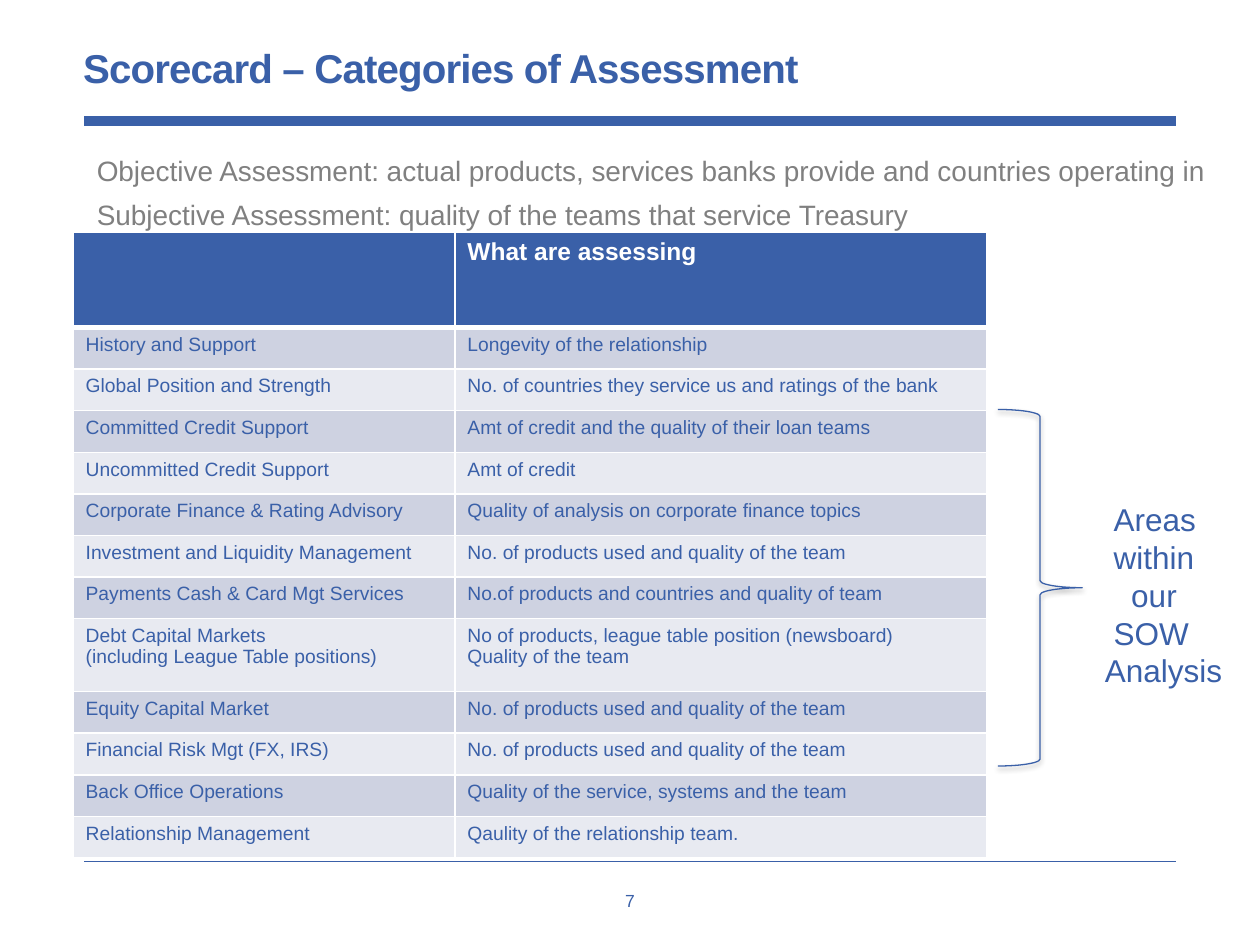
from pptx import Presentation
from pptx.util import Inches, Pt
from pptx.dml.color import RGBColor
from pptx.enum.shapes import MSO_CONNECTOR as Conn, MSO_SHAPE as Shape
from pptx.enum.text import PP_ALIGN as Align
from pptx.oxml import parse_xml
from pptx.oxml.ns import nsdecls

BLUE, GREY, WHITE = "3A60A8", "808080", "FFFFFF"
BANDS = ["CED2E1", "E8EAF1"]
TITLE = "Scorecard – Categories of Assessment"
INTRO = [
    "Objective Assessment: actual products, services banks provide and countries operating in",
    "Subjective Assessment: quality of the teams that service Treasury",
]
TEAM = "No. of products used and quality of the team"
ROWS = [
    ("", "What are assessing"),
    ("History and Support", "Longevity of the relationship"),
    ("Global Position and Strength", "No. of countries they service us and ratings of the bank"),
    ("Committed Credit Support", "Amt of credit and the quality of their loan teams"),
    ("Uncommitted Credit Support", "Amt of credit"),
    ("Corporate Finance & Rating Advisory", "Quality of analysis on corporate finance topics"),
    ("Investment and Liquidity Management", TEAM),
    ("Payments Cash & Card Mgt Services", "No.of products and countries and quality of team"),
    ("Debt Capital Markets\n(including League Table positions)",
     "No of products, league table position (newsboard)\nQuality of the team"),
    ("Equity Capital Market", TEAM),
    ("Financial Risk Mgt (FX, IRS)", TEAM),
    ("Back Office Operations", "Quality of the service, systems and the team"),
    ("Relationship Management", "Qaulity of the relationship team."),
]
COLS = [3.03, 4.22]
HEAD, ROW, TALL = 0.76, 0.33, 0.58
AREAS = [("Areas", 0.07), ("within", 0.07), ("our", 0.21), ("SOW", 0.07), ("Analysis", 0)]


def color(code):
    return RGBColor.from_string(code)


def style(para, size, code, bold=False):
    font = para.font
    font.name, font.size, font.bold = "Arial", Pt(size), bold
    font.color.rgb = color(code)


def add_text(slide, box, lines, size, code, bold=False, wrap=True, inset=True):
    frame = slide.shapes.add_textbox(*map(Inches, box)).text_frame
    frame.word_wrap = wrap
    if not inset:
        frame.margin_left = frame.margin_right = 0
        frame.margin_top = frame.margin_bottom = 0
    frame.text = "\n".join(lines)
    for para in frame.paragraphs:
        style(para, size, code, bold)
    return frame.paragraphs


def add_rule(slide, top, width):
    rule = slide.shapes.add_connector(
        Conn.STRAIGHT, Inches(0.67), Inches(top), Inches(9.33), Inches(top))
    rule.line.color.rgb = color(BLUE)
    rule.line.width = Pt(width)
    rule._element.spPr.append(parse_xml(f"<a:effectLst {nsdecls('a')}/>"))


def add_edges(cell, base):
    props = cell._tc.get_or_add_tcPr()
    for side, width in zip("LRTB", (1, 1, 1, base)):
        props.append(parse_xml(
            f'<a:ln{side} {nsdecls("a")} w="{Pt(width)}"><a:solidFill>'
            f'<a:srgbClr val="{WHITE}"/></a:solidFill></a:ln{side}>'))


def add_grid(slide):
    high = [HEAD] + [TALL if "\n" in row[0] else ROW for row in ROWS[1:]]
    table = slide.shapes.add_table(
        len(ROWS), len(COLS), Inches(0.58), Inches(1.84),
        Inches(sum(COLS)), Inches(sum(high))).table
    for col, width in zip(table.columns, COLS):
        col.width = Inches(width)
    for r, row in enumerate(ROWS):
        table.rows[r].height = Inches(high[r])
        head = r == 0
        for c, text in enumerate(row):
            cell = table.cell(r, c)
            add_edges(cell, 3 if head else 1)
            cell.fill.solid()
            cell.fill.fore_color.rgb = color(BLUE if head else BANDS[(r - 1) % 2])
            cell.text = text
            for para in cell.text_frame.paragraphs:
                style(para, 14 if head else 11, WHITE if head else BLUE, head)


def add_brace(slide):
    brace = slide.shapes.add_shape(
        Shape.RIGHT_BRACE, Inches(7.92), Inches(3.25), Inches(0.67), Inches(2.83))
    brace.fill.background()
    brace.line.color.rgb = color(BLUE)
    brace.line.width = Pt(0.75)
    brace._element.spPr.append(parse_xml(
        f'<a:effectLst {nsdecls("a")}><a:outerShdw blurRad="{Pt(3.1)}" dist="{Pt(1.6)}" '
        'dir="5400000" rotWithShape="0"><a:srgbClr val="000000"><a:alpha val="38000"/>'
        '</a:srgbClr></a:outerShdw></a:effectLst>'))


def main():
    deck = Presentation()
    deck.slide_width, deck.slide_height = Inches(10), Inches(7.5)
    slide = deck.slides.add_slide(deck.slide_layouts[6])

    add_rule(slide, 6.84, 0.57)
    add_rule(slide, 0.96, 6)
    page = add_text(slide, (4.53, 7.06, 0.94, 0.17), ["7"], 10, BLUE, inset=False)
    page[0].alignment = Align.CENTER
    add_grid(slide)

    title = add_text(slide, (0.66, 0.39, 8.68, 0.34), [TITLE], 23, BLUE, True, inset=False)
    title[0].line_spacing = Pt(24)
    title[0].runs[0].font._element.set("spc", "-50")

    for para in add_text(slide, (0.67, 1.17, 9.33, 0.72), INTRO, 16, GREY):
        para.space_after = Pt(6)

    add_brace(slide)
    words = [word for word, _ in AREAS]
    paras = add_text(slide, (8.67, 3.92, 1.14, 1.62), words, 18, BLUE, wrap=False)
    for para, (_, indent) in zip(paras, AREAS):
        para._p.get_or_add_pPr().set("marL", str(Inches(indent)))

    deck.save("out.pptx")


if __name__ == "__main__":
    main()
